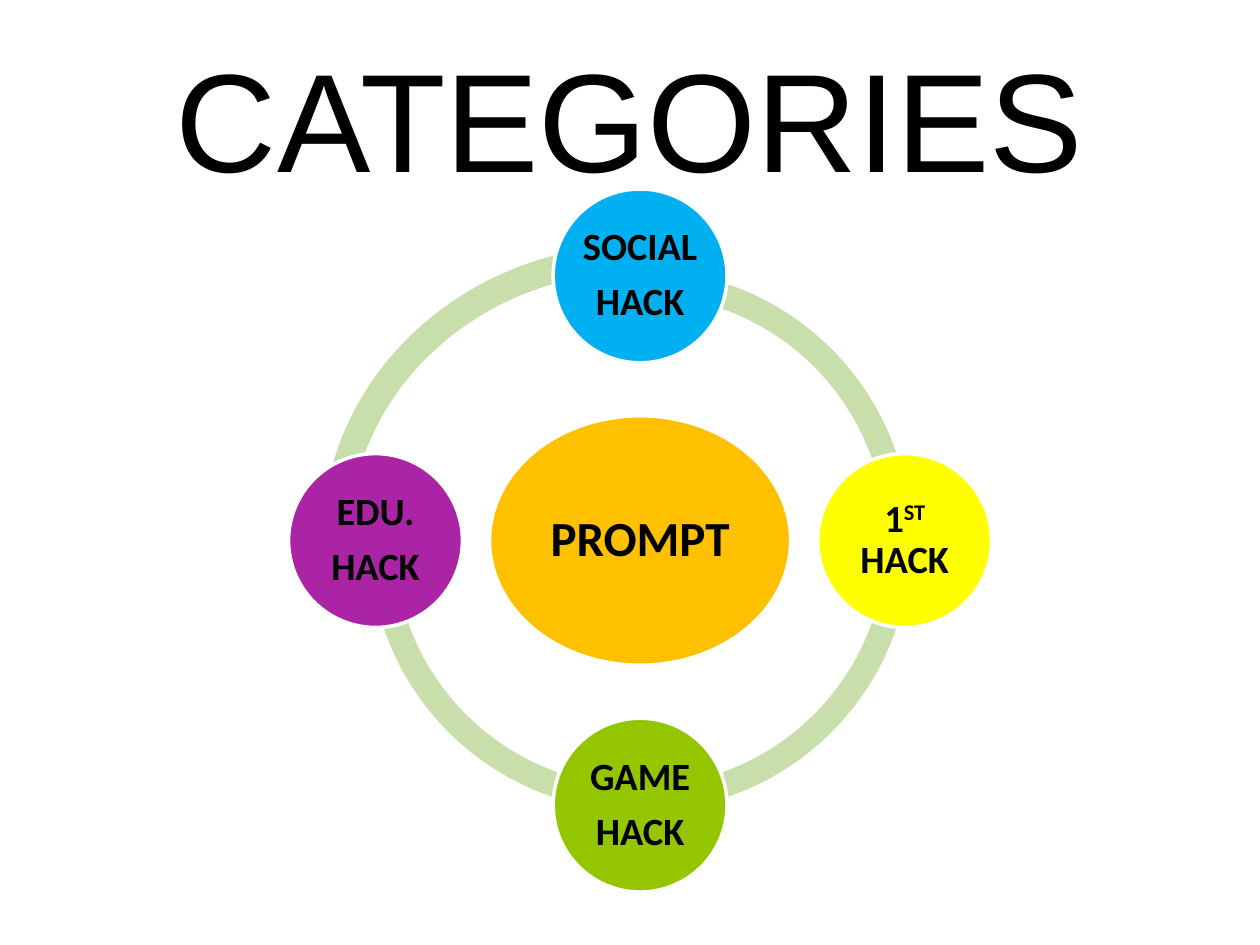
from pptx import Presentation
from pptx.dml.color import RGBColor
from pptx.enum.shapes import MSO_SHAPE
from pptx.enum.text import MSO_ANCHOR, PP_ALIGN
from pptx.util import Inches, Pt

COLORS = {
    "ink": "000000", "outline": "FFFFFF", "ring": "C8DFAB", "prompt": "FFC000",
    "social": "00B0F0", "first": "FFFF00", "game": "94C600", "edu": "AC24A6",
}

deck = Presentation()
deck.slide_width, deck.slide_height = Inches(10), Inches(7.5)
slide = deck.slides.add_slide(deck.slide_layouts[6])

# Square grid: 100 columns by 75 rows
CELL = deck.slide_width / 100
HUB_COL, HUB_ROW = 50.8, 42.9
ORBIT = 21


def add_centered(kind, col, row, width, height, color):
    """Add a filled shape whose centre is at the given column and row."""
    box = [int(n * CELL) for n in (col - width / 2, row - height / 2, width, height)]
    shape = slide.shapes.add_shape(kind, *box)
    shape.shadow.inherit = False
    shape.fill.solid()
    shape.fill.fore_color.rgb = RGBColor.from_string(COLORS[color])
    shape.line.fill.background()
    return shape


def add_run(paragraph, words, size, face, bold=False):
    run = paragraph.add_run()
    run.text = words
    run.font.size, run.font.name, run.font.bold = Pt(size), face, bold
    run.font.color.rgb = RGBColor.from_string(COLORS["ink"])
    return run


# Title
title = slide.shapes.add_textbox(*[int(n * CELL) for n in (5, 3, 90, 12.5)]).text_frame
title.word_wrap = True
title.vertical_anchor = MSO_ANCHOR.MIDDLE
title.paragraphs[0].alignment = PP_ALIGN.CENTER
add_run(title.paragraphs[0], "CATEGORIES", 80, "Arial")

# Ring: four quarter arcs, angles in units of 100000/60000 degrees
QUARTER = 54
for start, width, height in [(2, 50.5, 47), (1, 43, 43), (0, 43, 43), (3, 43, 43)]:
    arc = add_centered(MSO_SHAPE.BLOCK_ARC, HUB_COL, HUB_ROW, width, height, "ring")
    arc.adjustments[0] = start * QUARTER
    arc.adjustments[1] = (start + 1) % 4 * QUARTER
    arc.adjustments[2] = 0.046

# Hub and the four categories: steps from the hub, size, inset, text size, lines of runs
circles = [
    ("prompt", 0, 0, 23.9, 19.8, 0.4, 28, [["PROMPT"]]),
    ("social", 0, -1, 13.8, 13.8, 0.3, 22, [["SOCIAL"], ["HACK"]]),
    ("first", 1, 0, 13.8, 13.8, 0.3, 22, [["1", "ST", " HACK"]]),
    ("game", 0, 1, 13.8, 13.8, 0.3, 22, [["GAME"], ["HACK"]]),
    ("edu", -1, 0, 13.8, 13.8, 0.3, 22, [["EDU."], ["HACK"]]),
]
for category, across, down, width, height, inset, size, lines in circles:
    circle = add_centered(MSO_SHAPE.OVAL, HUB_COL + across * ORBIT,
                          HUB_ROW + down * ORBIT, width, height, category)
    circle.line.color.rgb = RGBColor.from_string(COLORS["outline"])
    circle.line.width = Pt(2)
    label = circle.text_frame
    label.word_wrap = True
    label.vertical_anchor = MSO_ANCHOR.MIDDLE
    label.margin_left = label.margin_right = int(inset * CELL)
    label.margin_top = label.margin_bottom = int(inset * CELL)
    for index, line in enumerate(lines):
        paragraph = label.add_paragraph() if index else label.paragraphs[0]
        paragraph.alignment = PP_ALIGN.CENTER
        paragraph.line_spacing = 0.9
        paragraph.space_after = Pt(0.35 * size)
        for words in line:
            run = add_run(paragraph, words, size, "Calibri", bold=True)
            if words == "ST":  # raised ordinal
                run.font._element.set("baseline", "30000")

deck.save("out.pptx")
